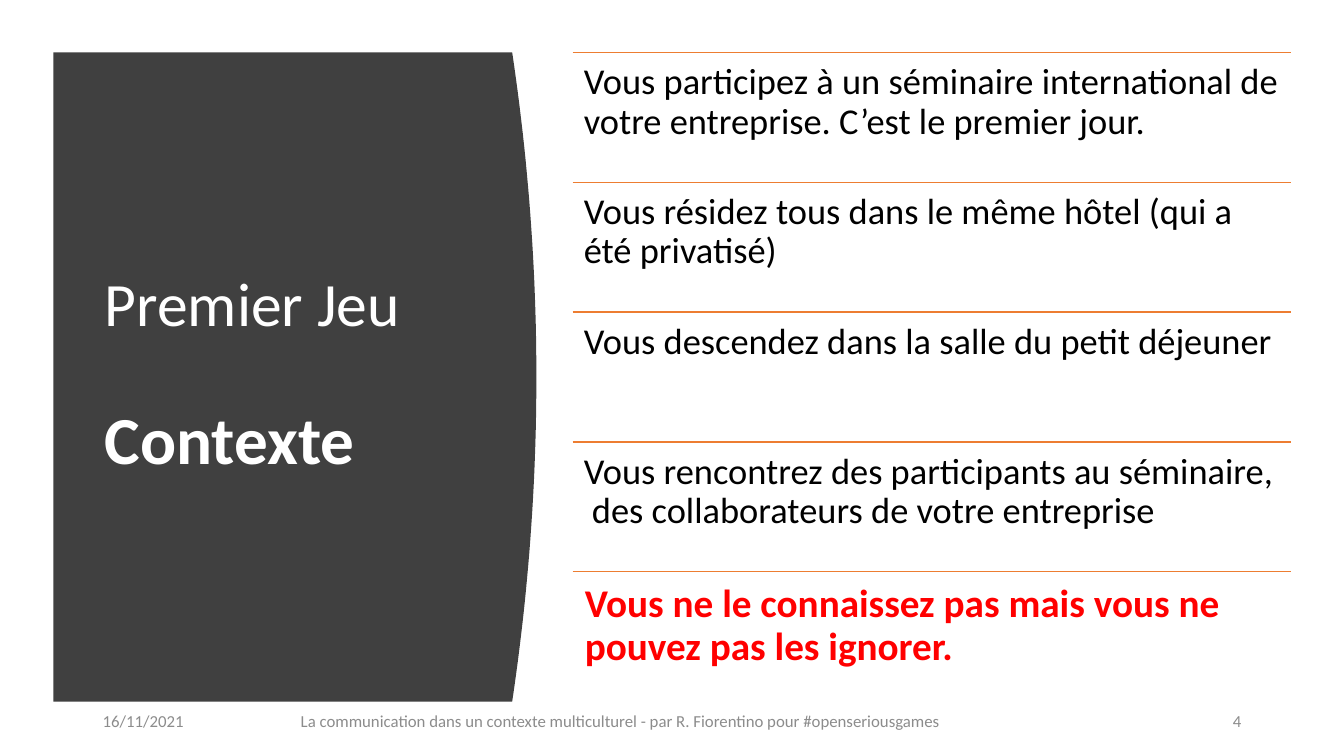
from dataclasses import dataclass

from lxml.etree import SubElement
from pptx import Presentation
from pptx.dml.color import RGBColor
from pptx.enum.shapes import MSO_CONNECTOR
from pptx.enum.text import MSO_ANCHOR, MSO_AUTO_SIZE, PP_ALIGN
from pptx.oxml.ns import qn
from pptx.shapes.base import BaseShape
from pptx.slide import Slide
from pptx.util import Inches, Pt

FONT = "Calibri"
WHITE = RGBColor(0xFF, 0xFF, 0xFF)
BLACK = RGBColor(0x00, 0x00, 0x00)
RED = RGBColor(0xFF, 0x00, 0x00)
ORANGE = RGBColor(0xED, 0x7D, 0x31)
CHARCOAL = RGBColor(0x40, 0x40, 0x40)
GRAY = RGBColor(0x8C, 0x8C, 0x8C)

TOP, BOTTOM = 0.52, 6.96
PANEL_LEFT, PANEL_EDGE, PANEL_BULGE = 0.53, 5.08, 0.24
CURVE_STEPS = 48
LIST_LEFT, LIST_WIDTH = 5.68, 7.12
FOOTER_TOP, FOOTER_HEIGHT = 6.95, 0.4


@dataclass(frozen=True)
class Statement:
    text: str
    size: int = 26
    color: RGBColor = BLACK
    bold: bool = False
    inset: float = 0.11


@dataclass(frozen=True)
class FooterItem:
    text: str
    left: float
    width: float
    alignment: PP_ALIGN


STATEMENTS = [
    Statement("Vous participez à un séminaire international de votre entreprise. C’est le premier jour."),
    Statement("Vous résidez tous dans le même hôtel (qui a été privatisé)"),
    Statement("Vous descendez dans la salle du petit déjeuner"),
    Statement("Vous rencontrez des participants au séminaire,  des collaborateurs de votre entreprise"),
    Statement("Vous ne le connaissez pas mais vous ne pouvez pas les ignorer.", 28, RED, True, 0.12),
]

FOOTER_ITEMS = [
    FooterItem(
        "La communication dans un contexte multiculturel - par R. Fiorentino pour #openseriousgames",
        2.18, 7.95, PP_ALIGN.CENTER,
    ),
    FooterItem("4", 10.27, 2.14, PP_ALIGN.RIGHT),
    FooterItem("16/11/2021", 0.92, 1.04, PP_ALIGN.LEFT),
]


def write_text(
    shape: BaseShape,
    text: str,
    *,
    size: int,
    color: RGBColor,
    bold: bool = False,
    alignment: PP_ALIGN = PP_ALIGN.LEFT,
    anchor: MSO_ANCHOR = MSO_ANCHOR.TOP,
    line_spacing: float = 1.0,
    inset: float | None = None,
) -> None:
    frame = shape.text_frame
    frame.word_wrap = True
    frame.auto_size = MSO_AUTO_SIZE.NONE
    frame.vertical_anchor = anchor
    if inset is not None:
        frame.margin_left = frame.margin_right = Inches(inset)
        frame.margin_top = frame.margin_bottom = Inches(inset)
    paragraph = frame.paragraphs[0]
    paragraph.alignment = alignment
    paragraph.line_spacing = line_spacing
    run = paragraph.add_run()
    run.text = text
    run.font.name = FONT
    run.font.size = Pt(size)
    run.font.bold = bold
    run.font.color.rgb = color


def add_text_box(slide: Slide, left: float, top: float, width: float, height: float) -> BaseShape:
    return slide.shapes.add_textbox(Inches(left), Inches(top), Inches(width), Inches(height))


def add_panel(slide: Slide) -> None:
    curve = []
    for step in range(CURVE_STEPS + 1):
        position = step / CURVE_STEPS
        bulge = PANEL_BULGE * (1 - (2 * position - 1) ** 2)
        curve.append((Inches(PANEL_EDGE + bulge), Inches(TOP + (BOTTOM - TOP) * position)))
    builder = slide.shapes.build_freeform(Inches(PANEL_LEFT), Inches(TOP))
    builder.add_line_segments(curve + [(Inches(PANEL_LEFT), Inches(BOTTOM))], close=True)
    panel = builder.convert_to_shape()
    panel.shadow.inherit = False
    panel.fill.solid()
    panel.fill.fore_color.rgb = CHARCOAL
    panel.line.fill.background()


def add_title(slide: Slide) -> None:
    title = slide.shapes.title
    title.left, title.top = Inches(0.94), Inches(1.11)
    title.width, title.height = Inches(3.74), Inches(5.24)
    heading = {"color": WHITE, "anchor": MSO_ANCHOR.MIDDLE, "line_spacing": 0.9}
    write_text(title, "Premier Jeu", size=44, **heading)
    for _ in range(2):
        title.text_frame.paragraphs[0].add_line_break()
    write_text(title, "Contexte", size=48, bold=True, **heading)
    title.element.getparent().append(title.element)


def add_rule(slide: Slide, top: float) -> None:
    rule = slide.shapes.add_connector(
        MSO_CONNECTOR.STRAIGHT,
        Inches(LIST_LEFT), Inches(top), Inches(LIST_LEFT + LIST_WIDTH), Inches(top),
    )
    rule.line.color.rgb = ORANGE
    rule.line.width = Pt(1)
    SubElement(rule.element.spPr, qn("a:effectLst"))


def add_statements(slide: Slide) -> None:
    height = (BOTTOM - TOP) / len(STATEMENTS)
    for index, statement in enumerate(STATEMENTS):
        top = TOP + index * height
        add_rule(slide, top)
        write_text(
            add_text_box(slide, LIST_LEFT, top, LIST_WIDTH, height),
            statement.text,
            size=statement.size,
            color=statement.color,
            bold=statement.bold,
            line_spacing=0.9,
            inset=statement.inset,
        )


def add_footer(slide: Slide) -> None:
    for item in FOOTER_ITEMS:
        write_text(
            add_text_box(slide, item.left, FOOTER_TOP, item.width, FOOTER_HEIGHT),
            item.text,
            size=12,
            color=GRAY,
            alignment=item.alignment,
            anchor=MSO_ANCHOR.MIDDLE,
        )


def main() -> None:
    presentation = Presentation()
    presentation.slide_width = Inches(13.33)
    presentation.slide_height = Inches(7.5)
    slide = presentation.slides.add_slide(presentation.slide_layouts[5])
    add_panel(slide)
    add_title(slide)
    add_statements(slide)
    add_footer(slide)
    presentation.save("out.pptx")


if __name__ == "__main__":
    main()
